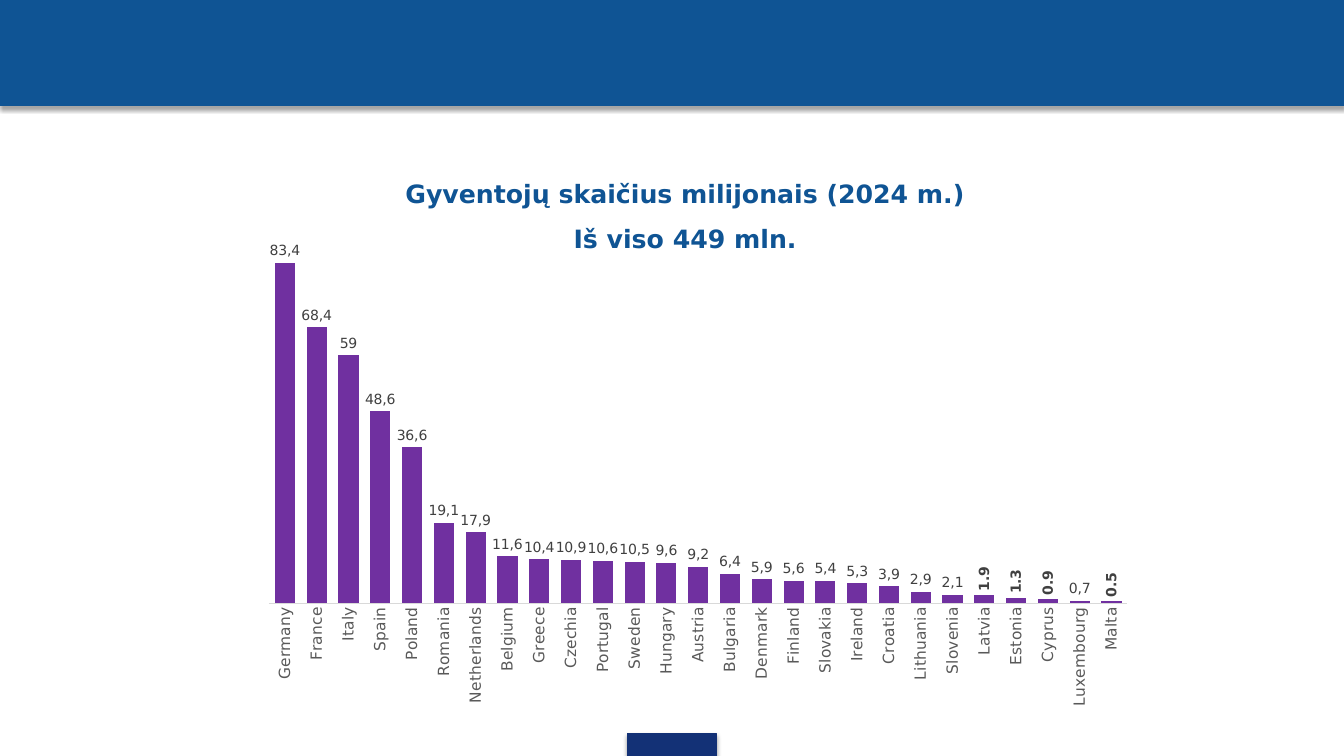
"""Build a slide with a column chart of population by country."""
import pptx
import pptx.chart.data
import pptx.dml.color
import pptx.enum.chart
import pptx.enum.shapes
import pptx.enum.text
import pptx.oxml
import pptx.util
from pptx.util import Inches

COLORS = {
    "band": "0F5494", "tab": "133176", "bar": "7030A0",
    "label": "404040", "names": "595959", "axis": "D9D9D9", "text": "000000",
}
FONT = "DejaVu Sans"
TITLE = ["Gyventojų skaičius milijonais (2024 m.)", "Iš viso 449 mln."]
BANDS = [((0, 0, 13.33, 1.05), "band"), ((6.22, 7.28, 0.89, 0.22), "tab")]
TITLE_BOX = (2.1, 1.97, 9, 0.51)
CHART_BOX = (2.49, 2.22, 8.87, 4.89)
PLOT = {"x": 0.02, "y": 0.02, "w": 0.96, "h": 0.75}
ROWS = [
    ("Germany", 82.9, "83,4"), ("France", 67.2, "68,4"), ("Italy", 60.4, "59"),
    ("Spain", 46.7, "48,6"), ("Poland", 38, "36,6"), ("Romania", 19.5, "19,1"),
    ("Netherlands", 17.2, "17,9"), ("Belgium", 11.4, "11,6"),
    ("Greece", 10.7, "10,4"), ("Czechia", 10.6, "10,9"),
    ("Portugal", 10.3, "10,6"), ("Sweden", 10.1, "10,5"),
    ("Hungary", 9.8, "9,6"), ("Austria", 8.8, "9,2"), ("Bulgaria", 7.1, "6,4"),
    ("Denmark", 5.8, "5,9"), ("Finland", 5.5, "5,6"), ("Slovakia", 5.4, "5,4"),
    ("Ireland", 4.8, "5,3"), ("Croatia", 4.1, "3,9"), ("Lithuania", 2.8, "2,9"),
    ("Slovenia", 2, "2,1"), ("Latvia", 1.9, None), ("Estonia", 1.3, None),
    ("Cyprus", 0.9, None), ("Luxembourg", 0.6, "0,7"), ("Malta", 0.5, None),
]
SHADOW = (
    '<a:effectLst xmlns:a="http://schemas.openxmlformats.org/drawingml/2006/main">'
    '<a:outerShdw blurRad="39370" dist="22860" dir="5400000" rotWithShape="0">'
    '<a:srgbClr val="000000"><a:alpha val="35000"/></a:srgbClr>'
    '</a:outerShdw></a:effectLst>'
)
CHART_NS = 'xmlns:c="http://schemas.openxmlformats.org/drawingml/2006/chart"'


def color(name):
    return pptx.dml.color.RGBColor.from_string(COLORS[name])


def style(font, size, name, bold=False, face=FONT):
    font.name, font.size, font.bold = face, pptx.util.Pt(size), bold
    font.color.rgb = color(name)


def turn(body, angle):
    body.set("rot", str(angle * 60000))
    body.set("vert", "horz")


def add_band(slide, box, name):
    band = slide.shapes.add_shape(
        pptx.enum.shapes.MSO_SHAPE.RECTANGLE, *map(Inches, box))
    band.fill.solid()
    band.fill.fore_color.rgb = color(name)
    band.line.color.rgb = color(name)
    band.line.width = pptx.util.Pt(0.75)
    band._element.spPr.append(pptx.oxml.parse_xml(SHADOW))


def add_title(slide):
    title = slide.shapes.title
    title.left, title.top, title.width, title.height = map(Inches, TITLE_BOX)
    frame = title.text_frame
    frame.word_wrap = True
    frame.auto_size = pptx.enum.text.MSO_AUTO_SIZE.NONE
    frame.vertical_anchor = pptx.enum.text.MSO_ANCHOR.MIDDLE
    frame.margin_bottom = Inches(0.37)
    para = frame.paragraphs[0]
    para.alignment = pptx.enum.text.PP_ALIGN.CENTER
    para.line_spacing = 1.5
    para.space_before = pptx.util.Pt(0)
    props = para._p.get_or_add_pPr()
    props.set("marL", str(Inches(0.39)))
    props.set("indent", "0")
    for i, line in enumerate(TITLE):
        if i:
            para.add_line_break()
        run = para.add_run()
        run.text = line
        style(run.font, 18, "band", True)


def set_plot(chart):
    parts = "".join(f'<c:{key}Mode val="edge"/>' for key in "xy")
    parts += "".join(f'<c:{key} val="{val}"/>' for key, val in PLOT.items())
    area = chart._chartSpace.chart.plotArea
    for old in area.xpath("c:layout"):
        area.remove(old)
    area.insert(0, pptx.oxml.parse_xml(
        f'<c:layout {CHART_NS}><c:manualLayout><c:layoutTarget val="inner"/>'
        f'{parts}</c:manualLayout></c:layout>'))


def add_labels(bars):
    place = pptx.enum.chart.XL_LABEL_POSITION.OUTSIDE_END
    labels = bars.data_labels
    labels.show_value = True
    labels.position = place
    style(labels.font, 10, "label", True)
    turn(labels._element.get_or_add_txPr().bodyPr, -90)
    for i, (_, _, text) in enumerate(ROWS):
        if text:
            label = bars.points[i].data_label
            frame = label.text_frame
            turn(frame._bodyPr, 0)
            run = frame.paragraphs[0].add_run()
            run.text = text
            style(run.font, 10, "label")
            label.position = place


def add_chart(slide):
    data = pptx.chart.data.CategoryChartData()
    data.categories = [row[0] for row in ROWS]
    data.add_series("Series 1", [row[1] for row in ROWS])
    chart = slide.shapes.add_chart(
        pptx.enum.chart.XL_CHART_TYPE.COLUMN_CLUSTERED,
        *map(Inches, CHART_BOX), data).chart
    chart.has_title = chart.has_legend = False
    style(chart.font, 10, "text", face="Arial")
    set_plot(chart)
    value = chart.value_axis
    value.visible = value.has_major_gridlines = False
    value.minimum_scale, value.maximum_scale = 0, 90
    names = chart.category_axis
    names.major_tick_mark = pptx.enum.chart.XL_TICK_MARK.NONE
    names.format.line.color.rgb = color("axis")
    names.format.line.width = pptx.util.Pt(0.75)
    style(names.tick_labels.font, 11, "names")
    turn(names._element.get_or_add_txPr().bodyPr, -90)
    plot = chart.plots[0]
    plot.gap_width, plot.overlap = 58, -27
    plot.vary_by_categories = False
    bars = plot.series[0]
    bars.format.fill.solid()
    bars.format.fill.fore_color.rgb = color("bar")
    add_labels(bars)


def main():
    deck = pptx.Presentation()
    deck.slide_width, deck.slide_height = Inches(13.33), Inches(7.5)
    slide = deck.slides.add_slide(deck.slide_layouts[5])
    for box, name in BANDS:
        add_band(slide, box, name)
    add_title(slide)
    add_chart(slide)
    deck.save("out.pptx")


if __name__ == "__main__":
    main()
